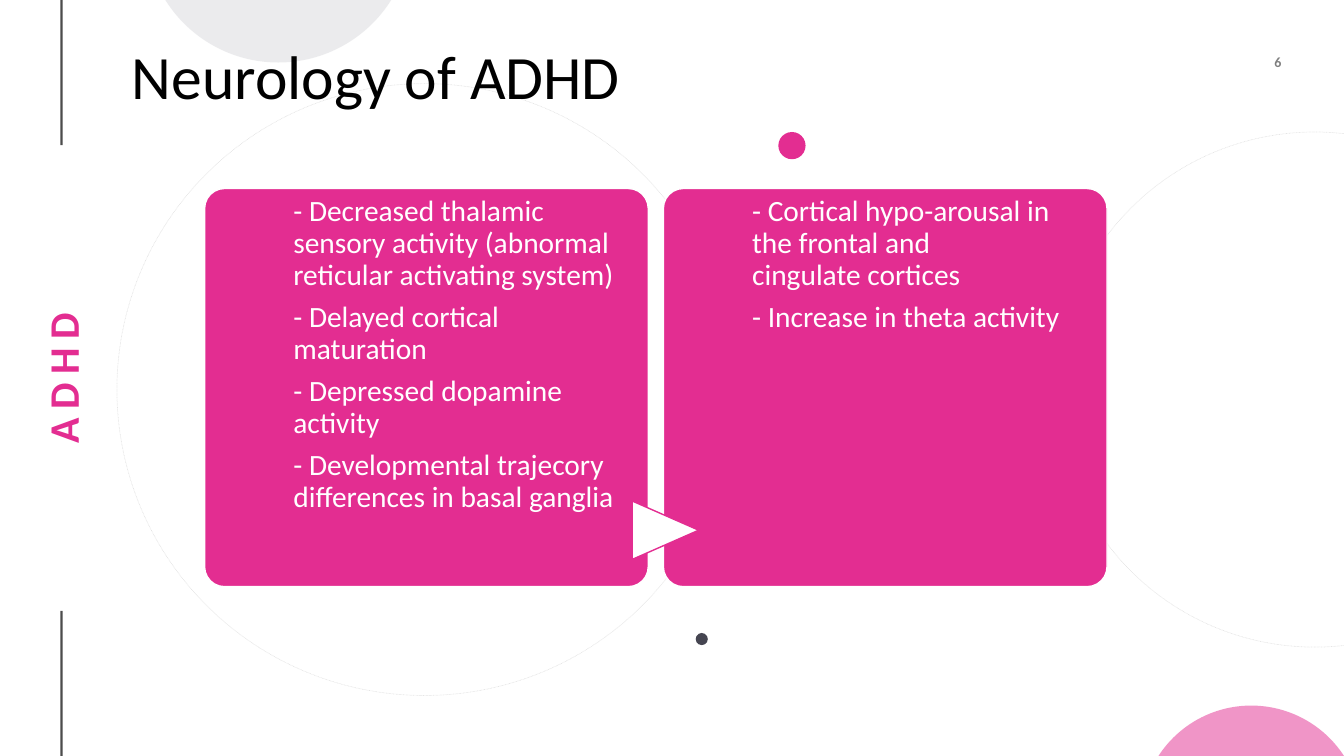
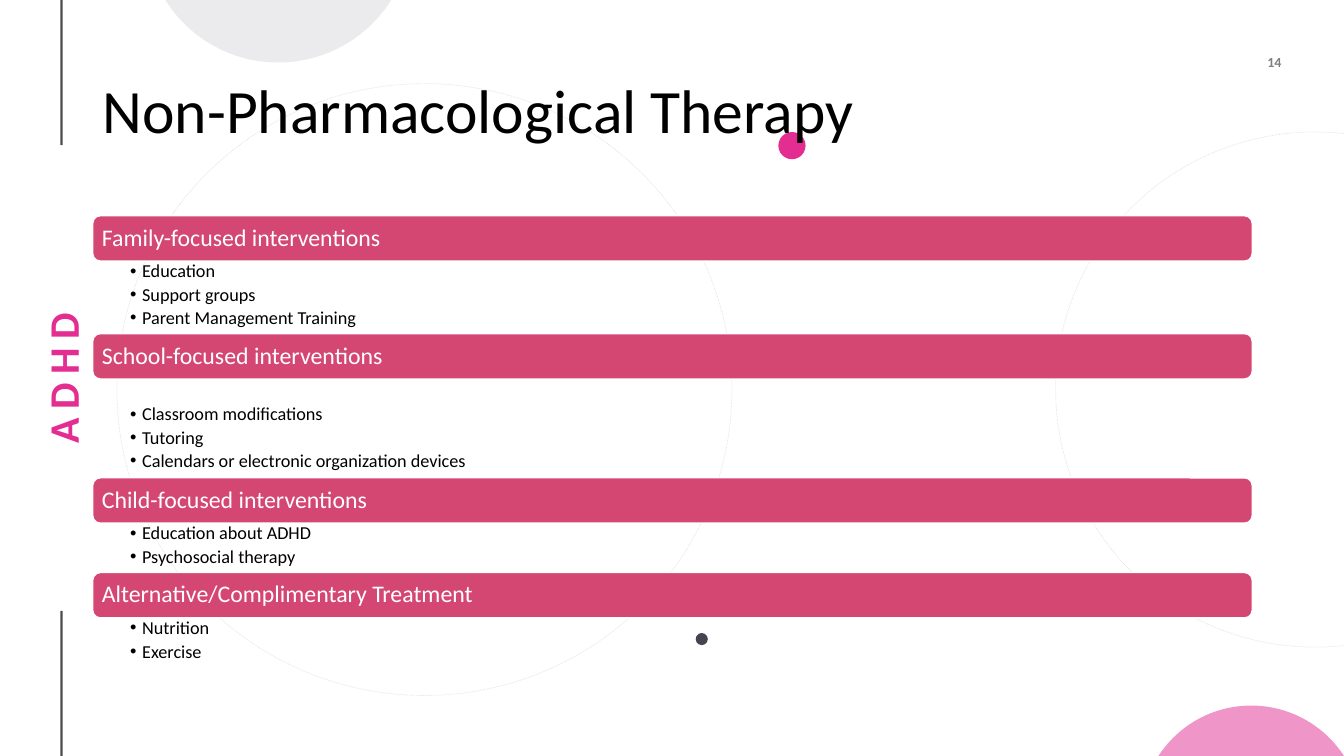
from math import asin, cos, sin, tan

from lxml.etree import SubElement
from pptx import Presentation
from pptx.dml.color import RGBColor
from pptx.enum.dml import MSO_LINE
from pptx.enum.shapes import MSO_CONNECTOR as CONNECTOR, MSO_SHAPE as SHAPE
from pptx.enum.text import MSO_ANCHOR as ANCHOR, PP_ALIGN as ALIGN
from pptx.oxml.ns import qn
from pptx.util import Inches, Pt

# Content
NBSP = chr(160)  # keeps two words on one line
SIDE_LABEL = "ADHD"
NEUROLOGY = {
    "title": "Neurology of ADHD",
    "number": "6",
    "title_at": (1.21, 0.4, 11.21, 0.77),
    "cards": [
        [f"- Decreased{NBSP}thalamic sensory activity "
         f"(abnormal reticular activating{NBSP}system)",
         "- Delayed cortical maturation",
         "- Depressed dopamine activity",
         "- Developmental trajecory differences in basal ganglia"],
        [f"- Cortical{NBSP}hypo-arousal{NBSP}in the frontal "
         f"and cingulate{NBSP}cortices",
         f"- Increase{NBSP}in theta{NBSP}activity"],
    ],
}
THERAPY = {
    "title": "Non-Pharmacological Therapy",
    "number": "14",
    "title_at": (0.92, 0.4, 11.5, 1.45),
    # heading, space above the list, height of the list, bullets
    "sections": [
        ("Family-focused interventions", 0, 0.73,
         ["Education", "Support groups", "Parent Management Training"]),
        ("School-focused interventions", 0.25, 0.74,
         ["Classroom modifications", "Tutoring",
          "Calendars or electronic organization devices"]),
        ("Child-focused interventions", 0, 0.5,
         ["Education about ADHD", "Psychosocial therapy"]),
        ("Alternative/Complimentary Treatment", 0, 0.49,
         ["Nutrition", "Exercise"]),
    ],
}

# Shared style
FONT = "Calibri"
PINK, ROSE, SLATE, GREY = "E32D91", "D54773", "454551", "D8D9DC"
BLACK, WHITE = "000000", "FFFFFF"
TITLE = {"size": 44, "color": BLACK}
LABEL = {"size": 30, "color": PINK, "bold": True}
NUMBER = {"size": 10, "color": BLACK, "bold": True}
CARD = {"size": 21, "color": WHITE}
HEADING = {"size": 17, "color": WHITE}
BULLET = {"size": 13, "color": BLACK}

# Decoration
RULES = [(0, 1.44), (6.06, 7.5)]
RULE_X = 0.61
RINGS = [(10.47, 1.31, 5.14, 5.11), (1.16, 0.83, 6.1, 6.07)]
DOTS = [(6.9, 6.28, 0.12, SLATE), (7.72, 1.31, 0.27, PINK)]
# centre x, slide edge y, half chord, depth (negative is up), colour
CAPS = [(12.41, 7.5, 0.92, -0.5, PINK), (2.76, 0, 1.12, 0.62, GREY)]


def set_color(color_format, value):
    color_format.rgb = RGBColor.from_string(value)


def set_alpha(parent, percent):
    color = next(parent.iter(qn("a:srgbClr")))
    SubElement(color, qn("a:alpha"), val=str(percent * 1000))


def paint(shape, fill=None, line=None, width=1):
    shape.shadow.inherit = False
    if fill:
        shape.fill.solid()
        set_color(shape.fill.fore_color, fill)
    else:
        shape.fill.background()
    if line:
        set_color(shape.line.color, line)
        shape.line.width = Pt(width)
    else:
        shape.line.fill.background()


def add_box(page, kind, at, **look):
    shape = page.shapes.add_shape(kind, *map(Inches, at))
    paint(shape, **look)
    return shape


def add_text(page, at, lines, style, anchor=ANCHOR.TOP, align=ALIGN.LEFT,
             insets=(0, 0, 0, 0), spacing=1.0, after=0):
    box = page.shapes.add_textbox(*map(Inches, at))
    frame = box.text_frame
    frame.word_wrap = True
    frame.vertical_anchor = anchor
    for side, inset in zip(("left", "top", "right", "bottom"), insets):
        setattr(frame, f"margin_{side}", Inches(inset))
    for index, line in enumerate(lines):
        para = frame.add_paragraph() if index else frame.paragraphs[0]
        layout = {"alignment": align, "line_spacing": spacing,
                  "space_after": Pt(after)}
        for name, value in layout.items():
            setattr(para, name, value)
        span = para.add_run()
        span.text = line
        look = {"name": FONT, "size": Pt(style["size"]),
                "bold": style.get("bold", False)}
        for name, value in look.items():
            setattr(span.font, name, value)
        set_color(span.font.color, style["color"])
    return box


def add_bullets(box):
    indent = Inches(0.12)
    for para in box.text_frame.paragraphs:
        props = para._p.get_or_add_pPr()
        props.set("marL", str(indent))
        props.set("indent", str(-indent))
        SubElement(props, qn("a:buFont"), typeface="Arial")
        SubElement(props, qn("a:buChar"), char="•")


def bend(shape):
    """Turn each three line segments of an outline into one curve."""
    outline = next(shape._element.iter(qn("a:path")))
    segments = outline.findall(qn("a:lnTo"))
    for first in range(0, len(segments), 3):
        group = segments[first:first + 3]
        curve = SubElement(outline, qn("a:cubicBezTo"))
        group[0].addprevious(curve)
        for segment in group:
            curve.append(segment[0])
            outline.remove(segment)


def add_cap(page, center, edge, half, depth, color):
    """Draw the part of a circle that shows beyond the slide edge."""
    sag = abs(depth)
    toward = 1 if depth > 0 else -1
    radius = (half ** 2 + sag ** 2) / (2 * sag)
    angle = asin(half / radius)
    handle = 4 / 3 * tan(angle / 4) * radius
    side = [(half, 0), (half - handle * cos(angle), handle * sin(angle)),
            (handle, sag)]
    offsets = side + [(0, sag)] + [(-x, y) for x, y in reversed(side)]
    points = [(Inches(center + x), Inches(edge + toward * y))
              for x, y in offsets]
    builder = page.shapes.build_freeform(*points[0])
    builder.add_line_segments(points[1:], close=True)
    cap = builder.convert_to_shape()
    bend(cap)
    paint(cap, fill=color)
    set_alpha(cap._element.spPr, 50)


def add_page(deck, content):
    page = deck.slides.add_slide(deck.slide_layouts[6])
    # Side rules and label
    for top, bottom in RULES:
        rule = page.shapes.add_connector(
            CONNECTOR.STRAIGHT, *map(Inches, (RULE_X, top, RULE_X, bottom)))
        set_color(rule.line.color, BLACK)
        rule.line.width = Pt(1.5)
        set_alpha(rule._element.spPr, 70)
        SubElement(rule._element.spPr, qn("a:effectLst"))
    label = add_text(page, (-1.69, 3.48, 4.61, 0.55), [SIDE_LABEL], LABEL,
                     ANCHOR.MIDDLE, ALIGN.CENTER, (0.02,) * 4)
    label.rotation = 270
    label.text_frame.paragraphs[0].runs[0].font._element.set("spc", "600")
    # Slide number
    number = add_text(page, (11.94, 0.48, 0.77, 0.27), [content["number"]],
                      NUMBER, ANCHOR.MIDDLE, ALIGN.RIGHT)
    set_alpha(number._element, 50)
    # Rings, dots and caps
    for at in RINGS:
        ring = add_box(page, SHAPE.OVAL, at, line=BLACK, width=0.5)
        ring.line.dash_style = MSO_LINE.ROUND_DOT
        set_alpha(ring._element.spPr, 10)
    for left, top, size, color in DOTS:
        add_box(page, SHAPE.OVAL, (left, top, size, size), fill=color)
    for cap in CAPS:
        add_cap(page, *cap)
    add_text(page, content["title_at"], [content["title"]], TITLE,
             ANCHOR.MIDDLE, insets=(0.1, 0.05, 0.1, 0.05), spacing=0.9)
    return page


def build_neurology(deck):
    page = add_page(deck, NEUROLOGY)
    left, top, width, height, step = 2.03, 1.87, 4.4, 3.95, 4.55
    text_indent, text_width = 0.88, 3.28
    lefts = [left + step * index for index in range(len(NEUROLOGY["cards"]))]
    for card_left in lefts:
        card = add_box(page, SHAPE.ROUNDED_RECTANGLE,
                       (card_left, top, width, height), fill=PINK, line=WHITE)
        card.adjustments[0] = 0.05
    arrow = add_box(page, SHAPE.FLOWCHART_EXTRACT, (6.31, 4.93, 0.58, 0.66),
                    fill=WHITE, line=PINK)
    arrow.rotation = 90
    for card_left, lines in zip(lefts, NEUROLOGY["cards"]):
        add_text(page, (card_left + text_indent, top, text_width, height),
                 lines, CARD, insets=(0, 0.08, 0, 0), spacing=0.9, after=7.4)


def build_therapy(deck):
    page = add_page(deck, THERAPY)
    left, top, width, band, step = 0.92, 2.14, 11.5, 0.45, 0.44
    edge = 0.02
    for heading, gap, height, bullets in THERAPY["sections"]:
        add_box(page, SHAPE.ROUNDED_RECTANGLE, (left, top, width, band),
                fill=ROSE, line=WHITE)
        add_text(page, (left + edge, top + edge, width - 2 * edge,
                        band - 2 * edge), [heading], HEADING, ANCHOR.MIDDLE,
                 insets=(0.07,) * 4, spacing=0.9)
        top += step + gap
        box = add_text(page, (left, top, width, height), bullets, BULLET,
                       insets=(0.37, 0.02, 0.13, 0.02), spacing=0.9, after=2.6)
        add_bullets(box)
        top += height


def main():
    deck = Presentation()
    deck.slide_width, deck.slide_height = Inches(13.33), Inches(7.5)
    build_neurology(deck)
    build_therapy(deck)
    deck.save("out.pptx")


if __name__ == "__main__":
    main()
